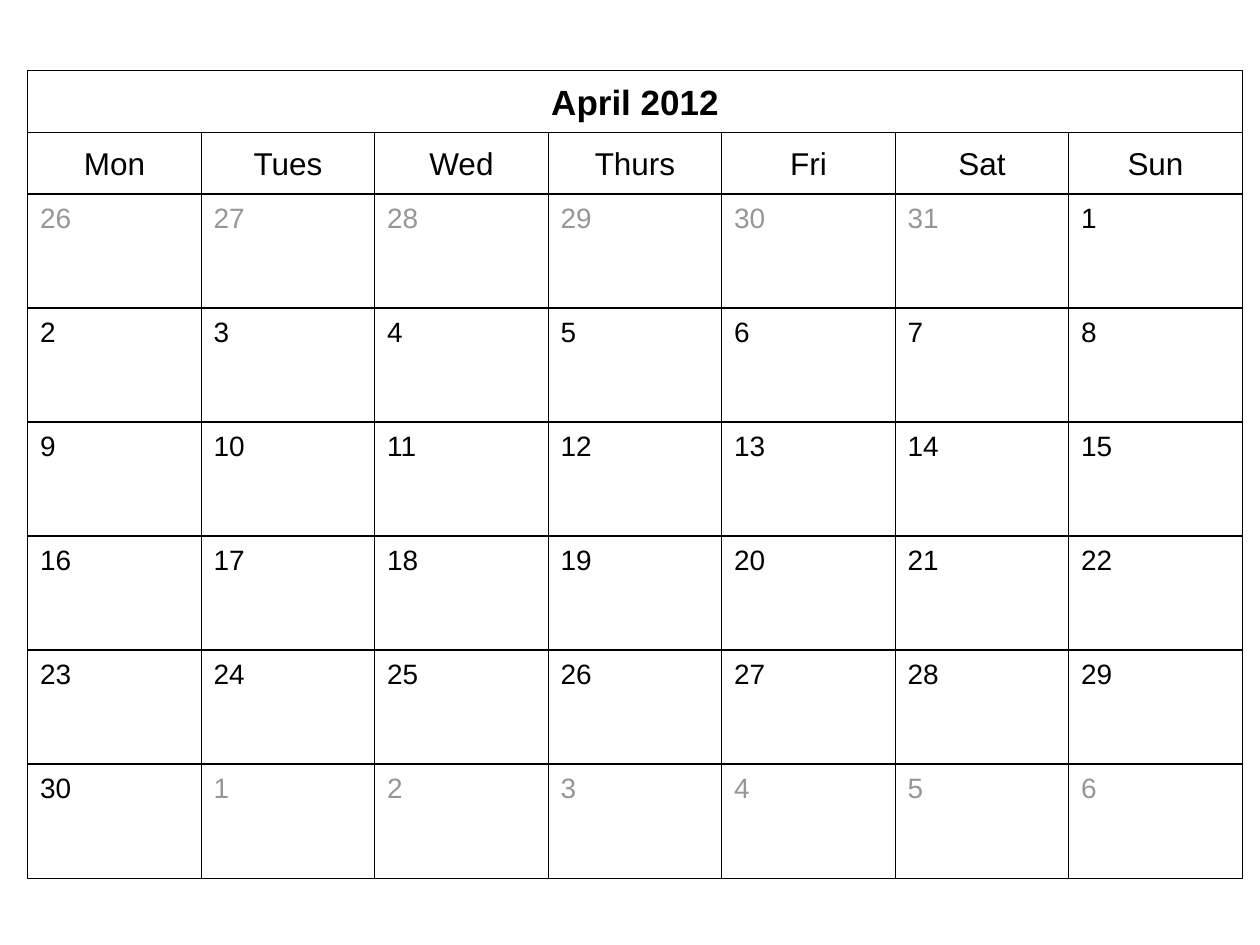
from pptx import Presentation
from pptx.dml.color import RGBColor
from pptx.enum import shapes, text
from pptx.util import Inches, Pt

DAY_NAMES = ["Mon", "Tues", "Wed", "Thurs", "Fri", "Sat", "Sun"]
BLACK, GREY, WHITE = "000000", "969696", "FFFFFF"
HEADER_H = Inches(0.49)


def color(value):
    return RGBColor.from_string(value)


def set_text(sp, content, size=16, fore=BLACK, bold=False, centered=False):
    tf = sp.text_frame
    tf.word_wrap = True
    tf.auto_size = text.MSO_AUTO_SIZE.NONE
    tf.margin_left = tf.margin_right = Inches(0.1)
    tf.margin_top = tf.margin_bottom = Inches(0.02 if centered else 0.05)
    tf.vertical_anchor = text.MSO_ANCHOR.MIDDLE if centered else text.MSO_ANCHOR.TOP
    p = tf.paragraphs[0]
    p.alignment = text.PP_ALIGN.CENTER if centered else text.PP_ALIGN.LEFT
    r = p.add_run()
    r.text = content
    r.font.name = "Arial"
    r.font.size = Pt(size)
    r.font.bold = bold
    r.font.color.rgb = color(fore)


def frame(sp):
    """Give a calendar box its white fill and thin black border."""
    sp.fill.solid()
    sp.fill.fore_color.rgb = color(WHITE)
    sp.line.color.rgb = color(BLACK)
    sp.line.width = Pt(0.75)


def add_cell(slide, left, top, width, height, content, **fmt):
    sp = slide.shapes.add_shape(shapes.MSO_SHAPE.RECTANGLE, left, top, width, height)
    sp.shadow.inherit = False
    frame(sp)
    set_text(sp, content, **fmt)


def add_month_title(slide, left, top, width, month):
    sp = slide.shapes.title
    sp.left, sp.top, sp.width, sp.height = left, top, width, HEADER_H
    frame(sp)
    set_text(sp, month, size=20, bold=True, centered=True)


def add_day_names(slide, left, top, width):
    col_w = width / len(DAY_NAMES)
    for col, name in enumerate(DAY_NAMES):
        add_cell(slide, round(left + col * col_w), top, round(col_w), HEADER_H,
                 name, size=18, centered=True)


def add_days(slide, left, top, width, height, before, current, after):
    """Fill the weeks row by row; days of the neighbouring months are grey."""
    days = [(d, GREY) for d in before]
    days += [(d, BLACK) for d in current]
    days += [(d, GREY) for d in after]
    columns = len(DAY_NAMES)
    col_w, row_h = width / columns, height / (len(days) // columns)
    for i, (day, fore) in enumerate(days):
        row, col = divmod(i, columns)
        add_cell(slide, round(left + col * col_w), round(top + row * row_h),
                 round(col_w), round(row_h), str(day), fore=fore)


def add_calendar(slide, left, top, width, height):
    add_month_title(slide, left, top, width, "April 2012")
    add_day_names(slide, left, top + HEADER_H, width)
    add_days(slide, left, top + 2 * HEADER_H, width, height - 2 * HEADER_H,
             before=range(26, 32), current=range(1, 31), after=range(1, 7))


def main():
    prs = Presentation()
    prs.slide_width, prs.slide_height = Inches(10), Inches(7.5)
    slide = prs.slides.add_slide(prs.slide_layouts.get_by_name("Title Only"))
    add_calendar(slide, Inches(0.22), Inches(0.56), Inches(9.64), Inches(6.41))
    prs.save("out.pptx")


if __name__ == "__main__":
    main()
